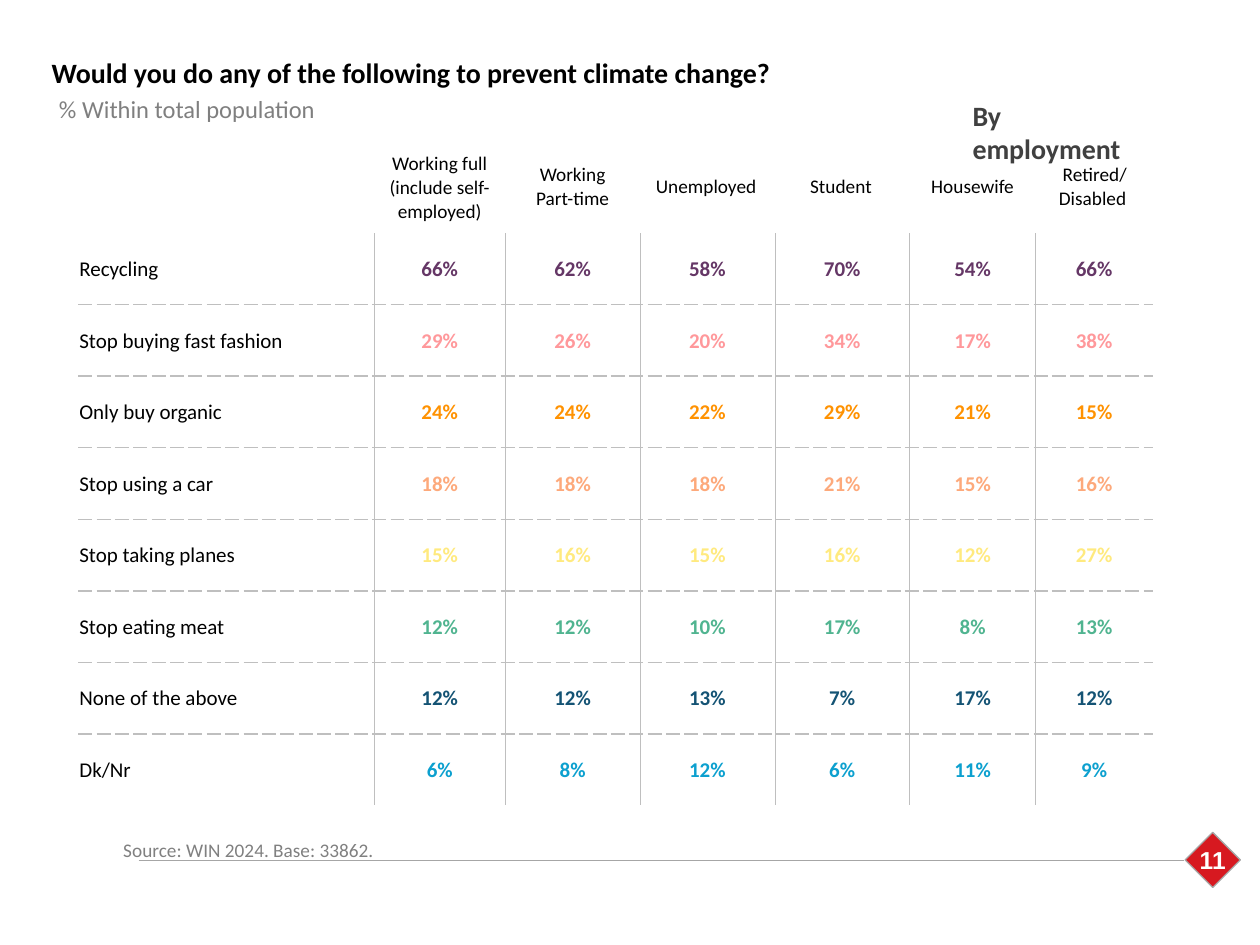
from lxml.etree import SubElement
from pptx import Presentation
from pptx.dml.color import RGBColor
from pptx.enum.shapes import MSO_CONNECTOR, MSO_SHAPE
from pptx.enum.text import MSO_ANCHOR, MSO_AUTO_SIZE, PP_ALIGN
from pptx.oxml.ns import qn
from pptx.util import Inches, Pt

SLIDE_WIDTH, SLIDE_HEIGHT = Inches(10), Inches(7.5)
NO_STYLE_NO_GRID = "{2D5ABB26-0587-4C30-8999-92F81FD0307C}"

BLACK = RGBColor(0x00, 0x00, 0x00)
WHITE = RGBColor(0xFF, 0xFF, 0xFF)
CHARCOAL = RGBColor(0x40, 0x40, 0x40)
MID_GREY = RGBColor(0x7F, 0x7F, 0x7F)
SOURCE_GREY = RGBColor(0x80, 0x80, 0x80)
RULE_GREY = RGBColor(0xA6, 0xA6, 0xA6)
BORDER_GREY = RGBColor(0xBF, 0xBF, 0xBF)
RED = RGBColor(0xD7, 0x19, 0x20)
PURPLE = RGBColor(0x65, 0x37, 0x66)
PINK = RGBColor(0xFF, 0x98, 0x9B)
ORANGE = RGBColor(0xFF, 0x92, 0x01)
PEACH = RGBColor(0xFD, 0xA9, 0x7B)
YELLOW = RGBColor(0xFF, 0xEA, 0x7F)
GREEN = RGBColor(0x50, 0xB4, 0x90)
NAVY = RGBColor(0x14, 0x53, 0x74)
CYAN = RGBColor(0x0C, 0xA0, 0xCF)

GROUPS = [
    ["Working full (include self-employed)"],
    ["Working Part-time"],
    ["Unemployed"],
    ["Student"],
    ["Housewife"],
    ["Retired/", "Disabled "],
]
ACTIONS = [
    ("Recycling", PURPLE, [66, 62, 58, 70, 54, 66]),
    ("Stop buying fast fashion", PINK, [29, 26, 20, 34, 17, 38]),
    ("Only buy organic", ORANGE, [24, 24, 22, 29, 21, 15]),
    ("Stop using a car", PEACH, [18, 18, 18, 21, 15, 16]),
    ("Stop taking planes", YELLOW, [15, 16, 15, 16, 12, 27]),
    ("Stop eating meat", GREEN, [12, 12, 10, 17, 8, 13]),
    ("None of the above", NAVY, [12, 12, 13, 7, 17, 12]),
    ("Dk/Nr", CYAN, [6, 8, 12, 6, 11, 9]),
]
GROUP_WIDTHS = [10.6, 10.5, 10.7, 10.7, 10.2, 9.2]
ACTION_WIDTHS = [23.5, 10.4, 10.7, 10.7, 10.7, 10, 9.3]


def across(percent):
    return int(SLIDE_WIDTH * percent / 100)


def down(percent):
    return int(SLIDE_HEIGHT * percent / 100)


def area(left, top, width, height):
    return across(left), down(top), across(width), down(height)


def write(frame, lines, size, color, bold=False, align=PP_ALIGN.LEFT, font="Calibri"):
    for index, line in enumerate(lines):
        paragraph = frame.add_paragraph() if index else frame.paragraphs[0]
        paragraph.alignment = align
        run = paragraph.add_run()
        run.text = line
        run.font.name = font
        run.font.size = Pt(size)
        run.font.bold = bold
        run.font.color.rgb = color


def add_title(slide, text):
    title = slide.shapes.title
    title.left, title.top, title.width, title.height = area(3.1, 5.2, 84.3, 4.93)
    frame = title.text_frame
    frame.auto_size = MSO_AUTO_SIZE.NONE
    frame.vertical_anchor = MSO_ANCHOR.TOP
    write(frame, [text], 16, BLACK, bold=True)


def add_label(slide, box, text, size, color, **style):
    frame = slide.shapes.add_textbox(*area(*box)).text_frame
    frame.word_wrap = True
    write(frame, [text], size, color, **style)
    return frame


def add_border(cell, side, width, dash):
    border = SubElement(cell._tc.get_or_add_tcPr(), qn(f"a:ln{side}"), w=str(Pt(width)))
    fill = SubElement(border, qn("a:solidFill"))
    SubElement(fill, qn("a:srgbClr"), val=str(BORDER_GREY))
    SubElement(border, qn("a:prstDash"), val=dash)


def add_grid(slide, left, top, widths, row_height, row_count):
    grid = slide.shapes.add_table(
        row_count, len(widths),
        *area(left, top, sum(widths), row_height * row_count)).table
    grid.first_row = grid.horz_banding = False
    grid._tbl.tblPr.find(qn("a:tableStyleId")).text = NO_STYLE_NO_GRID
    for column, width in zip(grid.columns, widths):
        column.width = across(width)
    for row in grid.rows:
        row.height = down(row_height)
    for cell in grid.iter_cells():
        cell.vertical_anchor = MSO_ANCHOR.MIDDLE
    return grid


def add_group_headings(slide):
    headings = add_grid(slide, 29.6, 15.47, GROUP_WIDTHS, 8.67, 1)
    for cell, lines in zip(headings.iter_cells(), GROUPS):
        cell.fill.background()
        write(cell.text_frame, lines, 11, BLACK, align=PP_ALIGN.CENTER)


def add_action_shares(slide):
    shares = add_grid(slide, 6.2, 24.67, ACTION_WIDTHS, 7.57, len(ACTIONS))
    last_row, last_column = len(ACTIONS) - 1, len(GROUPS)
    for row, (action, color, values) in enumerate(ACTIONS):
        for column, text in enumerate([action] + [f"{value}%" for value in values]):
            cell = shares.cell(row, column)
            cell.margin_left = cell.margin_right = cell.margin_top = Inches(0.01)
            cell.margin_bottom = 0
            if column > 0:
                add_border(cell, "L", 0.25, "solid")
            if column < last_column:
                add_border(cell, "R", 0.25, "solid")
            if row > 0:
                add_border(cell, "T", 1, "sysDash")
            if row < last_row:
                add_border(cell, "B", 1, "sysDash")
            cell.fill.background()
            if column:
                write(cell.text_frame, [text], 12, color, True, PP_ALIGN.CENTER)
            else:
                write(cell.text_frame, [text], 12, BLACK)


def add_page_marker(slide, number):
    marker = slide.shapes.add_shape(MSO_SHAPE.RECTANGLE, *area(94.7, 88.93, 3.1, 4.13))
    marker.rotation = 315
    marker.shadow.inherit = False
    marker.fill.solid()
    marker.fill.fore_color.rgb = RED
    marker.line.color.rgb = RULE_GREY
    marker.line.width = Pt(0.75)
    add_label(slide, (92.9, 88.8, 6.7, 4.53), number, 14, WHITE,
              bold=True, align=PP_ALIGN.CENTER, font="Arial")


def add_footer_rule(slide):
    rule = slide.shapes.add_connector(
        MSO_CONNECTOR.STRAIGHT, across(11), down(91.07), across(94), down(91.07))
    rule.line.color.rgb = RULE_GREY
    rule.line.width = Pt(0.75)
    SubElement(rule._element.spPr, qn("a:effectLst"))


def main():
    deck = Presentation()
    deck.slide_width, deck.slide_height = SLIDE_WIDTH, SLIDE_HEIGHT
    slide = deck.slides.add_slide(deck.slide_layouts[5])
    add_page_marker(slide, "11")
    add_footer_rule(slide)
    add_action_shares(slide)
    subtitle = add_label(slide, (3.7, 9.87, 61.7, 3.87), "% Within total population",
                         14, MID_GREY, align=PP_ALIGN.JUSTIFY)
    subtitle.paragraphs[0].line_spacing = 0.8
    add_title(slide, "Would you do any of the following to prevent climate change?")
    add_group_headings(slide)
    add_label(slide, (76.2, 9.73, 15.8, 4.93), "By employment", 16, CHARCOAL, bold=True)
    add_label(slide, (8.8, 88, 89.4, 3.87), "Source: WIN 2024. Base: 33862.", 11, SOURCE_GREY)
    deck.save("out.pptx")


if __name__ == "__main__":
    main()
